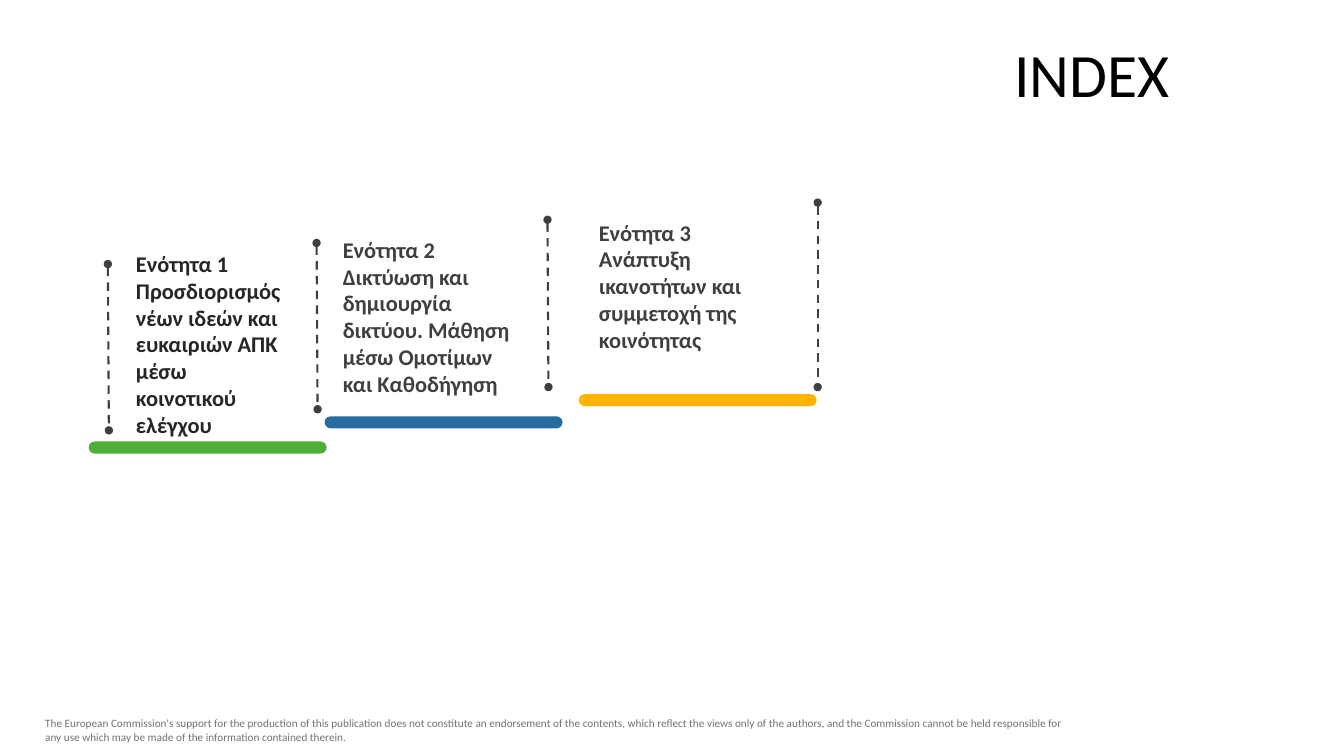
from lxml import etree
from pptx import Presentation
from pptx.dml.color import RGBColor
from pptx.enum.dml import MSO_LINE
from pptx.enum.shapes import MSO_CONNECTOR, MSO_SHAPE
from pptx.enum.text import MSO_ANCHOR, PP_ALIGN
from pptx.oxml.ns import qn
from pptx.util import Inches, Pt

BLACK = RGBColor(0x00, 0x00, 0x00)
INK = RGBColor(0x26, 0x26, 0x26)
DARK = RGBColor(0x3F, 0x3F, 0x3F)
GREY = RGBColor(0x75, 0x70, 0x70)
GREEN = RGBColor(0x4E, 0xAE, 0x3A)
BLUE = RGBColor(0x26, 0x6C, 0x9F)
AMBER = RGBColor(0xFF, 0xB5, 0x00)
ROUND = MSO_SHAPE.ROUNDED_RECTANGLE
STRAIGHT = MSO_CONNECTOR.STRAIGHT
DASH = MSO_LINE.DASH
MIDDLE = MSO_ANCHOR.MIDDLE
RIGHT = PP_ALIGN.RIGHT
FONT = "Calibri"
BAR_W, BAR_H = 2.36, 0.12


def set_font(par, size, color, bold=False):
    font = par.font
    font.name, font.size, font.bold = FONT, Pt(size), bold
    font.color.rgb = color


def add_text(box, lines, size, color, bold=False, pad=0.1):
    """Add a wrapped text box with one paragraph per line."""
    frame = slide.shapes.add_textbox(*map(Inches, box)).text_frame
    frame.word_wrap = True
    frame.margin_left = frame.margin_right = Inches(pad)
    frame.text = "\n".join(lines)
    for par in frame.paragraphs:
        set_font(par, size, color, bold)


deck = Presentation()
deck.slide_width, deck.slide_height = Inches(13.33), Inches(7.5)
slide = deck.slides.add_slide(deck.slide_layouts[5])

title = slide.shapes.title
title.left, title.top = Inches(3.09), Inches(0.37)
title.width, title.height = Inches(8.61), Inches(0.79)
title.text_frame.text = "INDEX"
title.text_frame.vertical_anchor = MIDDLE
head = title.text_frame.paragraphs[0]
head.alignment, head.line_spacing = RIGHT, 0.9
set_font(head, 44, BLACK)

add_text((0.35, 7.06, 10.46, 0.37), [
    "The European Commission's support for the production of this publication "
    "does not constitute an endorsement of the contents, which reflect the "
    "views only of the authors, and the Commission cannot be held responsible "
    "for any use which may be made of the information contained therein."],
    8, GREY)

# Bar left and top, bar colour, text box, side padding, text colour, topic
units = [
    (0.88, 4.38, GREEN, (1.25, 2.43, 1.71, 1.99), 0.1, INK,
     "Προσδιορισμός νέων ιδεών και ευκαιριών ΑΠΚ μέσω κοινοτικού ελέγχου"),
    (3.22, 4.13, BLUE, (3.28, 2.29, 1.95, 1.72), 0.12, DARK,
     "Δικτύωση και δημιουργία δικτύου. Μάθηση μέσω Ομοτίμων και Καθοδήγηση"),
    (5.74, 3.91, AMBER, (5.82, 2.12, 1.97, 1.45), 0.12, DARK,
     "Ανάπτυξη ικανοτήτων και συμμετοχή της κοινότητας"),
]
for num, (left, top, fill, box, pad, color, topic) in enumerate(units, 1):
    bar = slide.shapes.add_shape(
        ROUND, *map(Inches, (left, top, BAR_W, BAR_H)))
    bar.adjustments[0] = 0.5
    bar.shadow.inherit = False
    bar.fill.solid()
    bar.fill.fore_color.rgb = fill
    bar.line.fill.background()
    add_text(box, [f"Ενότητα {num}", topic], 16, color, True, pad)

# Start x, start y, end x, end y
posts = [
    (1.07, 2.62, 1.08, 4.27),
    (3.14, 2.41, 3.15, 4.06),
    (5.43, 2.18, 5.44, 3.84),
    (8.11, 2.01, 8.11, 3.84),
]
for ends in posts:
    post = slide.shapes.add_connector(STRAIGHT, *map(Inches, ends))
    post.line.color.rgb = DARK
    post.line.width = Pt(1.5)
    post.line.dash_style = DASH
    props = post.element.spPr
    line = props.find(qn("a:ln"))
    for tag in ("a:headEnd", "a:tailEnd"):
        etree.SubElement(line, qn(tag), type="oval")
    etree.SubElement(props, qn("a:effectLst"))

deck.save("out.pptx")
